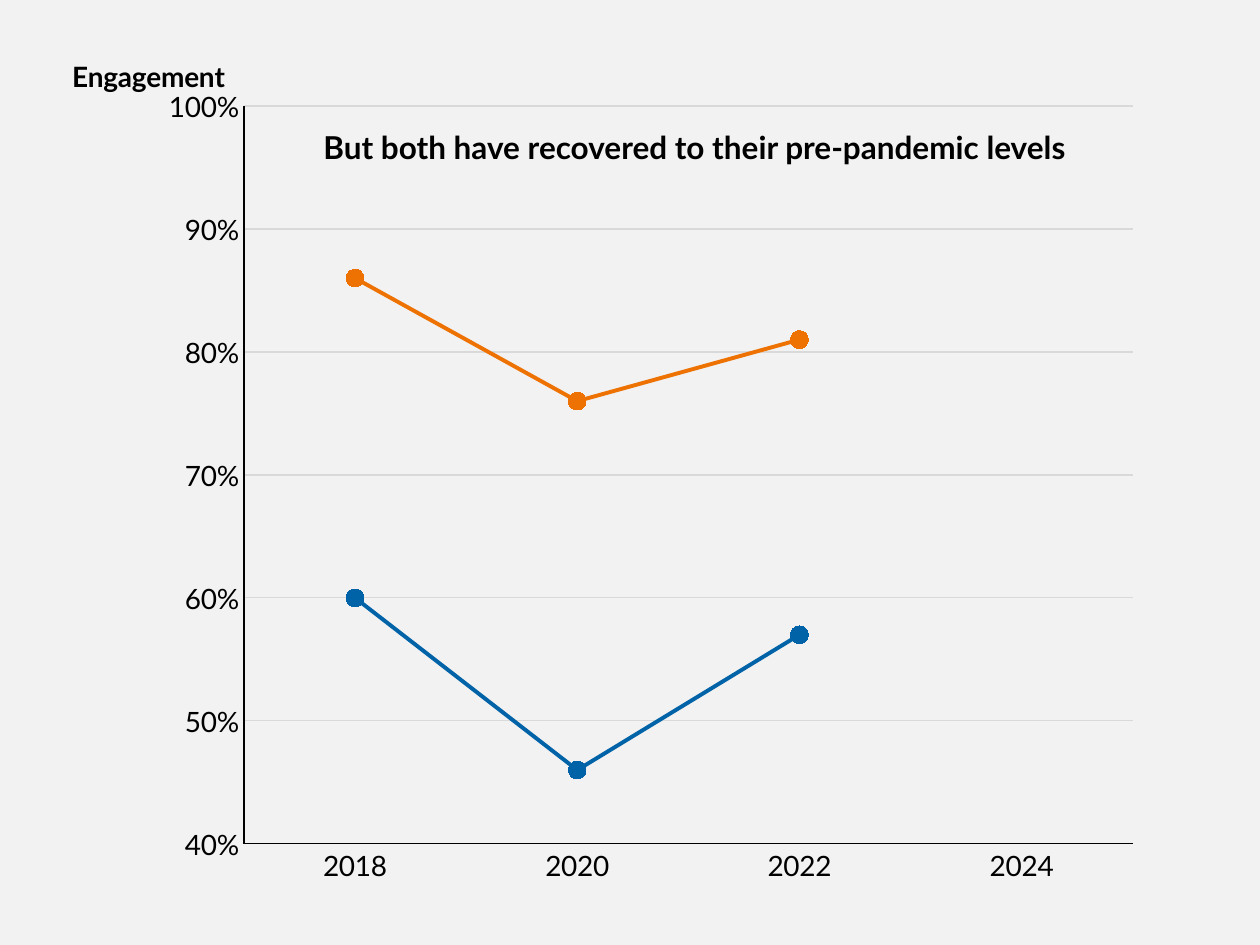
from dataclasses import dataclass

from lxml import etree
from pptx import Presentation
from pptx.chart.data import CategoryChartData
from pptx.dml.color import RGBColor
from pptx.enum.chart import XL_CHART_TYPE, XL_MARKER_STYLE, XL_TICK_MARK
from pptx.enum.text import MSO_AUTO_SIZE
from pptx.oxml.ns import qn
from pptx.util import Pt

LINE_MARKERS = XL_CHART_TYPE.LINE_MARKERS
CIRCLE = XL_MARKER_STYLE.CIRCLE
NO_TICK = XL_TICK_MARK.NONE
FIT_SHAPE = MSO_AUTO_SIZE.SHAPE_TO_FIT_TEXT

# Content
HEADLINE = "But both have recovered to their pre-pandemic levels"
AXIS_TITLE = "Engagement"
YEARS = ["2018", "2020", "2022", "2024"]
SERIES = [
    ("Series 1", (0.86, 0.76, 0.81, None), "EE7202"),
    ("Series 2", (0.60, 0.46, 0.57, None), "0062A7"),
]
AXIS_RANGE = (0.4, 1.0, 0.1)  # minimum, maximum, step

# Places in px: left, top, width, height
SLIDE_SIZE = (1260, 945)
CHART_BOX = (44, 26, 1109, 882)
PLOT_BOX = (244, 106, 889, 738)
AXIS_TITLE_AT = (67, 52)
HEADLINE_BOX = (311, 122, 863, 50)


@dataclass(frozen=True)
class Theme:
    font: str = "Lato"
    background: str = "F2F2F2"
    ink: str = "000000"
    grid: str = "D9D9D9"
    label_size: int = 16
    headline_size: int = 18
    axis_width: float = 0.75
    series_width: float = 2.25
    marker_size: int = 10


THEME = Theme()


def px(*lengths):
    return [round(length * 914400 / 126) for length in lengths]


def style_font(font, size, bold=False):
    font.name, font.size, font.bold = THEME.font, Pt(size), bold
    font.color.rgb = RGBColor.from_string(THEME.ink)


def style_line(line, color, width):
    line.color.rgb = RGBColor.from_string(color)
    line.width = Pt(width)


def manual_layout(box, inner=False):
    """Layout element placing box (px on the slide) as fractions of the chart."""
    left, top, width, height = CHART_BOX
    fractions = [(box[0] - left) / width, (box[1] - top) / height]
    fractions += [size / whole for size, whole in zip(box[2:], (width, height))]
    settings = [("layoutTarget", "inner")] if inner else []
    settings += [("xMode", "edge"), ("yMode", "edge")]
    settings += [(tag, f"{value:.4f}") for tag, value in zip("xywh", fractions)]
    layout = etree.Element(qn("c:layout"))
    manual = etree.SubElement(layout, qn("c:manualLayout"))
    for tag, value in settings:
        etree.SubElement(manual, qn(f"c:{tag}")).set("val", value)
    return layout


def set_layout(parent, layout, index):
    for old in parent.findall(qn("c:layout")):
        parent.remove(old)
    parent.insert(index, layout)


def add_engagement_chart(slide):
    data = CategoryChartData(number_format="0%")
    data.categories = YEARS
    for name, values, _ in SERIES:
        data.add_series(name, values)
    chart = slide.shapes.add_chart(LINE_MARKERS, *px(*CHART_BOX), data).chart
    chart.has_legend = chart.has_title = False
    style_font(chart.font, THEME.label_size)
    plot = chart.plots[0]
    plot.vary_by_categories = False

    # Lines and markers
    for series, (_, _, color) in zip(plot.series, SERIES):
        series.smooth = False
        style_line(series.format.line, color, THEME.series_width)
        marker = series.marker
        marker.style, marker.size = CIRCLE, THEME.marker_size
        marker.format.fill.solid()
        marker.format.fill.fore_color.rgb = RGBColor.from_string(color)
        style_line(marker.format.line, color, THEME.axis_width)

    # Axes
    year_axis, percent_axis = chart.category_axis, chart.value_axis
    for axis in (year_axis, percent_axis):
        axis.major_tick_mark = axis.minor_tick_mark = NO_TICK
        style_font(axis.tick_labels.font, THEME.label_size)
        style_line(axis.format.line, THEME.ink, THEME.axis_width)
    (percent_axis.minimum_scale, percent_axis.maximum_scale,
     percent_axis.major_unit) = AXIS_RANGE
    percent_axis.tick_labels.number_format = "0%"
    percent_axis.tick_labels.number_format_is_linked = False
    percent_axis.has_major_gridlines = True
    style_line(percent_axis.major_gridlines.format.line, THEME.grid, THEME.axis_width)

    # Horizontal axis title above the percentages
    title_frame = percent_axis.axis_title.text_frame
    title_frame.text = AXIS_TITLE
    style_font(title_frame.paragraphs[0].font, THEME.label_size, bold=True)
    body = title_frame._txBody.find(qn("a:bodyPr"))
    body.set("rot", "0")
    body.set("vert", "horz")
    title = percent_axis._element.find(qn("c:title"))
    set_layout(title, manual_layout(AXIS_TITLE_AT), 1)

    plot_area = chart._chartSpace.chart.plotArea
    set_layout(plot_area, manual_layout(PLOT_BOX, inner=True), 0)


def add_headline(slide):
    frame = slide.shapes.add_textbox(*px(*HEADLINE_BOX)).text_frame
    frame.word_wrap = True
    frame.auto_size = FIT_SHAPE
    frame.text = HEADLINE
    style_font(frame.paragraphs[0].font, THEME.headline_size, bold=True)


def main():
    deck = Presentation()
    deck.slide_width, deck.slide_height = px(*SLIDE_SIZE)
    slide = deck.slides.add_slide(deck.slide_layouts[6])
    slide.background.fill.solid()
    slide.background.fill.fore_color.rgb = RGBColor.from_string(THEME.background)
    add_engagement_chart(slide)
    add_headline(slide)
    deck.save("out.pptx")


if __name__ == "__main__":
    main()
